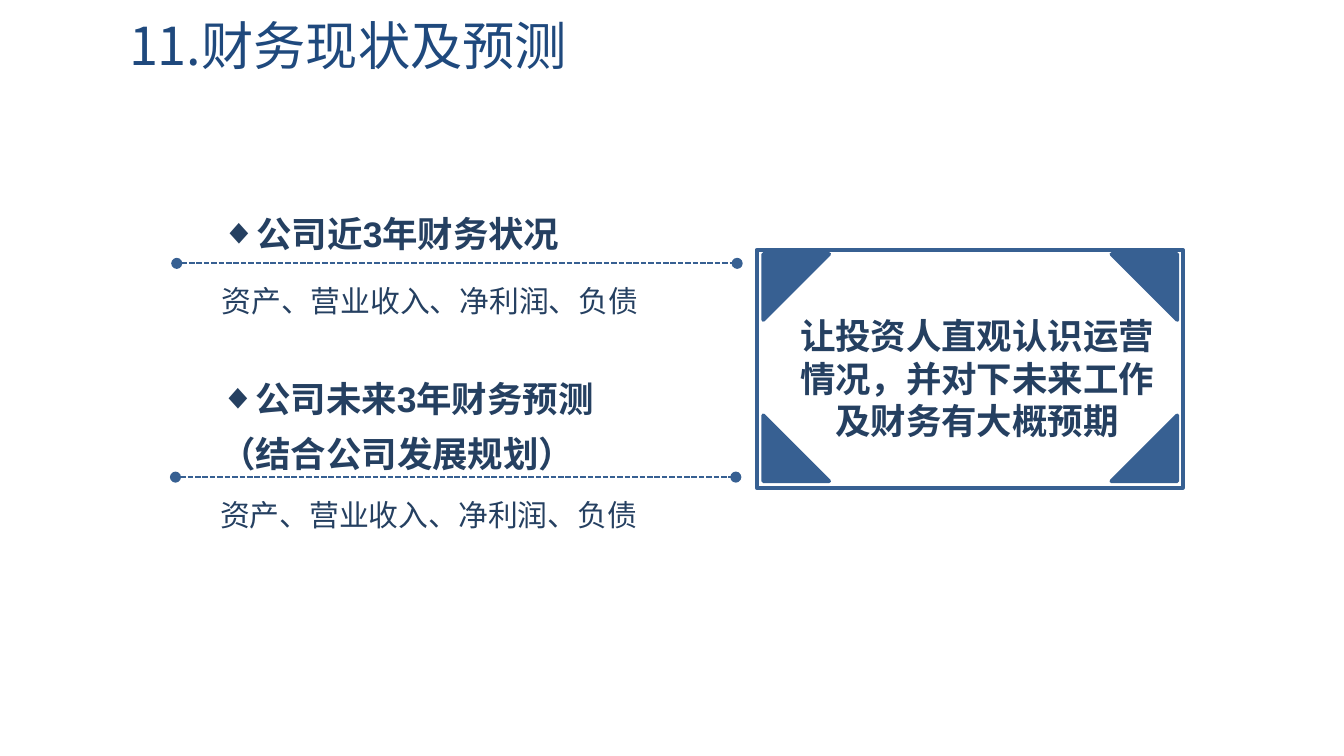
from dataclasses import dataclass
from typing import NamedTuple

from lxml import etree
from pptx import Presentation
from pptx.dml.color import RGBColor
from pptx.enum import dml, shapes, text
from pptx.oxml import ns
from pptx.util import Pt


@dataclass(frozen=True)
class Theme:
    title: str = "1F497D"
    blue: str = "376092"
    ink: str = "254061"
    latin: str = "Arial"
    asian: str = "Noto Sans CJK SC"
    display: str = "Noto Sans CJK JP"
    big: float = 28
    head: float = 19
    body: float = 16


class Topic(NamedTuple):
    left: float
    top: float
    rule: float
    high: float
    wide: float
    lines: tuple[str, ...]
    detail: str


class Corner(NamedTuple):
    left: float
    top: float
    turn: int


THEME = Theme()
ALIGN = text.PP_ALIGN
DETAIL = "资产、营业收入、净利润、负债"
TOPICS = (
    Topic(97.2, 103, 141.1, 34.6, 273.6, ("公司近3年财务状况",), DETAIL),
    Topic(96.5, 191.5, 255.6, 64.1, 337, ("公司未来3年财务预测", "（结合公司发展规划）"), DETAIL),
)
SIDE = 35.3
WEST, EAST, NORTH, SOUTH = 408.9, 595.4, 136.1, 222.5
CORNERS = (
    Corner(WEST, SOUTH, 0),
    Corner(WEST, NORTH, 90),
    Corner(EAST, NORTH, 180),
    Corner(EAST, SOUTH, 270),
)


def tag(parent, name: str, **attrs: str):
    return etree.SubElement(parent, ns.qn(name), **attrs)


def write(frame, *lines: str, size: float, color: str = THEME.ink,
          font: str = THEME.latin, asian: str = THEME.asian, bold: bool = False,
          align=ALIGN.JUSTIFY, space: float = 1, indent: float = 0,
          bullet: str = "") -> None:
    frame.word_wrap = True
    for i, line in enumerate(lines):
        para = frame.paragraphs[0] if i == 0 else frame.add_paragraph()
        para.alignment = align
        para.line_spacing = space
        para.space_before = Pt(0)
        props = para._p.get_or_add_pPr()
        props.set("marL", "0")
        props.set("indent", str(Pt(indent)))
        if bullet and i == 0:
            tag(props, "a:buFont", typeface=THEME.latin)
            tag(props, "a:buChar", char=bullet)
        else:
            tag(props, "a:buNone")
        run = para.add_run()
        run.text = line
        run.font.size = Pt(size)
        run.font.name = font
        run.font.bold = bold
        run.font.color.rgb = RGBColor.from_string(color)
        tag(run._r.get_or_add_rPr(), "a:ea", typeface=asian)


def box(slide, left: float, top: float, wide: float, high: float):
    item = slide.shapes.add_textbox(Pt(left), Pt(top), Pt(wide), Pt(high))
    return item.text_frame


def block(slide, kind, left: float, top: float, wide: float, high: float,
          line: float, solid: bool = True):
    item = slide.shapes.add_shape(kind, Pt(left), Pt(top), Pt(wide), Pt(high))
    item.shadow.inherit = False
    if solid:
        item.fill.solid()
        item.fill.fore_color.rgb = RGBColor.from_string(THEME.blue)
    else:
        item.fill.background()
    item.line.color.rgb = RGBColor.from_string(THEME.blue)
    item.line.width = Pt(line)
    return item


def rule(slide, left: float, top: float, wide: float) -> None:
    item = slide.shapes.add_connector(
        shapes.MSO_CONNECTOR.STRAIGHT, Pt(left), Pt(top), Pt(left + wide), Pt(top))
    item.line.color.rgb = RGBColor.from_string(THEME.blue)
    item.line.width = Pt(1)
    item.line.dash_style = dml.MSO_LINE.SQUARE_DOT
    edge = item.line._get_or_add_ln()
    tag(edge, "a:headEnd", type="oval")
    tag(edge, "a:tailEnd", type="oval")
    tag(item._element.spPr, "a:effectLst")


def topic(slide, item: Topic) -> None:
    write(box(slide, item.left, item.top, item.wide, item.high), *item.lines,
          size=THEME.head, bold=True, space=1.3, indent=14.4, bullet="◆")
    write(box(slide, item.left, item.rule + 1, 290, 30), item.detail,
          size=THEME.body, space=1.3, indent=14.4)
    rule(slide, item.left - 2.5, item.rule, 300.2)


def panel(slide) -> None:
    block(slide, shapes.MSO_SHAPE.FLOWCHART_PROCESS,
          405.4, 133.9, 228.2, 127.4, 2.25, solid=False)
    for item in CORNERS:
        part = block(slide, shapes.MSO_SHAPE.RIGHT_TRIANGLE,
                     item.left, item.top, SIDE, SIDE, 2)
        part.rotation = item.turn
    write(box(slide, 416.9, 164.9, 213.1, 76.3),
          "让投资人直观认识运营情况，并对下未来工作及财务有大概预期",
          size=THEME.head, font=THEME.asian, bold=True, align=ALIGN.CENTER)


def title(slide) -> None:
    item = slide.shapes.title
    item.left, item.top, item.width, item.height = map(Pt, (61.9, 1.4, 265.7, 45.4))
    item.text_frame.vertical_anchor = text.MSO_ANCHOR.MIDDLE
    write(item.text_frame, "11.财务现状及预测", size=THEME.big, color=THEME.title,
          font=THEME.display, asian=THEME.display, align=ALIGN.LEFT)


def main() -> None:
    deck = Presentation()
    deck.slide_width, deck.slide_height = Pt(720), Pt(405)
    slide = deck.slides.add_slide(deck.slide_layouts[5])
    title(slide)
    panel(slide)
    for item in TOPICS:
        topic(slide, item)
    deck.save("out.pptx")


if __name__ == "__main__":
    main()
